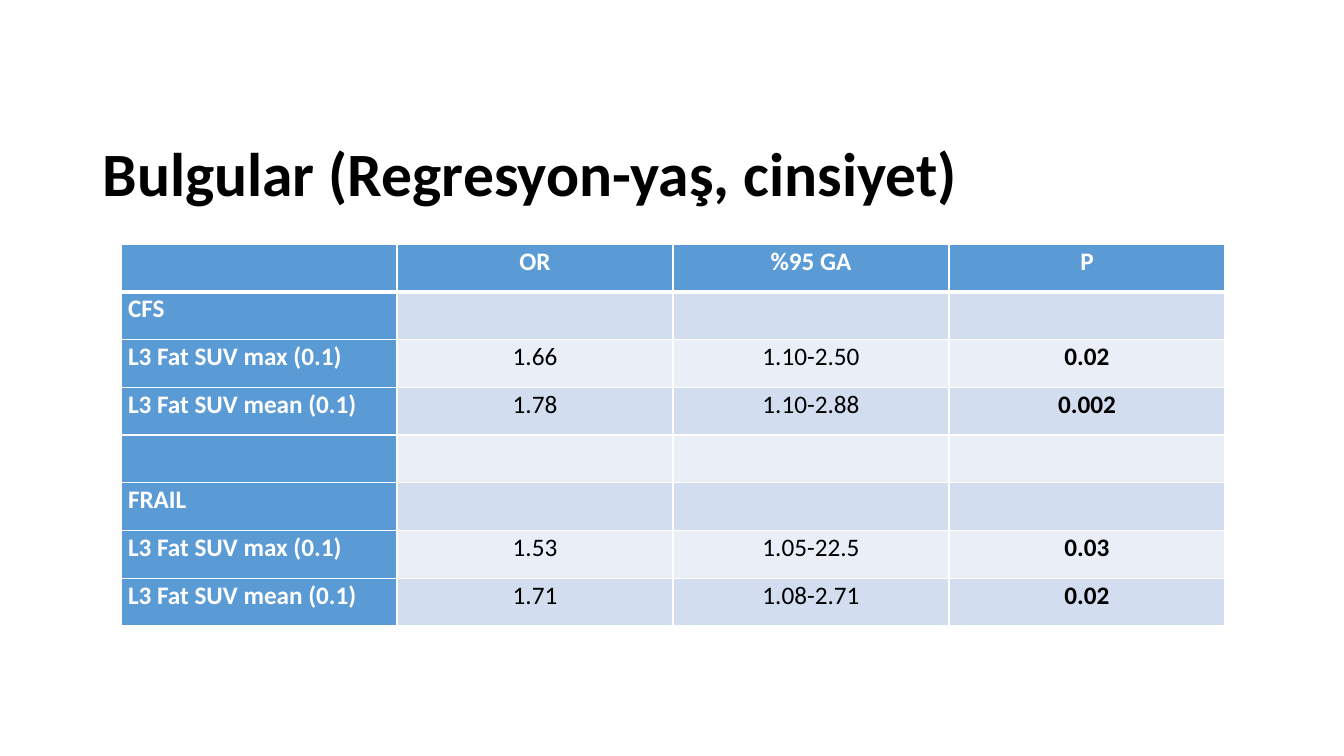
import lxml.etree
import pptx
import pptx.dml.color
import pptx.enum.text
import pptx.oxml.ns
import pptx.util

Inches = pptx.util.Inches
Align = pptx.enum.text.PP_ALIGN
Anchor = pptx.enum.text.MSO_ANCHOR

theme = {
    "font": "Calibri",
    "title_size": 44,
    "table_size": 18,
    "black": "000000",
    "white": "FFFFFF",
    "header": "5B9BD5",
    "bands": ["EAEFF7", "D2DEEF"],
}


def style(para, size, color, bold):
    para.font.name = theme["font"]
    para.font.size = pptx.util.Pt(size)
    para.font.bold = bold
    para.font.color.rgb = pptx.dml.color.RGBColor.from_string(color)


def add_borders(cell, widths):
    properties = cell._tc.get_or_add_tcPr()
    for index, (side, width) in enumerate(widths.items()):
        line = lxml.etree.Element(pptx.oxml.ns.qn(f"a:ln{side}"), w=str(pptx.util.Pt(width)))
        fill = lxml.etree.SubElement(line, pptx.oxml.ns.qn("a:solidFill"))
        lxml.etree.SubElement(fill, pptx.oxml.ns.qn("a:srgbClr"), val=theme["white"])
        properties.insert(index, line)


deck = pptx.Presentation()
deck.slide_width = Inches(13.33)
deck.slide_height = Inches(7.5)
page = deck.slides.add_slide(deck.slide_layouts[6])

# Title
box = page.shapes.add_textbox(Inches(0.92), Inches(1.3), Inches(11.5), Inches(0.9))
box.text_frame.word_wrap = True
box.text_frame.vertical_anchor = Anchor.MIDDLE
para = box.text_frame.paragraphs[0]
para.text = "Bulgular (Regresyon-yaş, cinsiyet)"
para.line_spacing = 0.9
style(para, theme["title_size"], theme["black"], True)

# Regression results
results = [
    ["", "OR", "%95 GA", "P"],
    ["CFS", "", "", ""],
    ["L3 Fat SUV max (0.1)", "1.66", "1.10-2.50", "0.02"],
    ["L3 Fat SUV mean (0.1)", "1.78", "1.10-2.88", "0.002"],
    ["", "", "", ""],
    ["FRAIL", "", "", ""],
    ["L3 Fat SUV max (0.1)", "1.53", "1.05-22.5", "0.03"],
    ["L3 Fat SUV mean (0.1)", "1.71", "1.08-2.71", "0.02"],
]
row_count, column_count = len(results), len(results[0])
table = page.shapes.add_table(
    row_count, column_count, Inches(1.2), Inches(2.42), Inches(10.95), Inches(3.79)
).table
table.first_col = True
for column in table.columns:
    column.width = Inches(10.95 / column_count)
for row in table.rows:
    row.height = Inches(3.79 / row_count)

for row_index, values in enumerate(results):
    for column_index, value in enumerate(values):
        cell = table.cell(row_index, column_index)
        is_heading = row_index == 0 or column_index == 0
        is_p_value = column_index == column_count - 1

        # Cell fill and borders
        fill_color = theme["header"] if is_heading else theme["bands"][row_index % 2]
        cell.fill.solid()
        cell.fill.fore_color.rgb = pptx.dml.color.RGBColor.from_string(fill_color)
        top = 3 if row_index == 1 else 1
        bottom = 3 if row_index == 0 else 1
        add_borders(cell, {"L": 1, "R": 1, "T": top, "B": bottom})

        # Cell text
        cell.margin_left = cell.margin_right = Inches(0.07)
        cell.margin_top = cell.margin_bottom = 0
        para = cell.text_frame.paragraphs[0]
        para.text = value
        para.alignment = Align.JUSTIFY if column_index == 0 else Align.CENTER
        para.line_spacing = 1.07
        text_color = theme["white"] if is_heading else theme["black"]
        style(para, theme["table_size"], text_color, is_heading or is_p_value)

deck.save("out.pptx")
